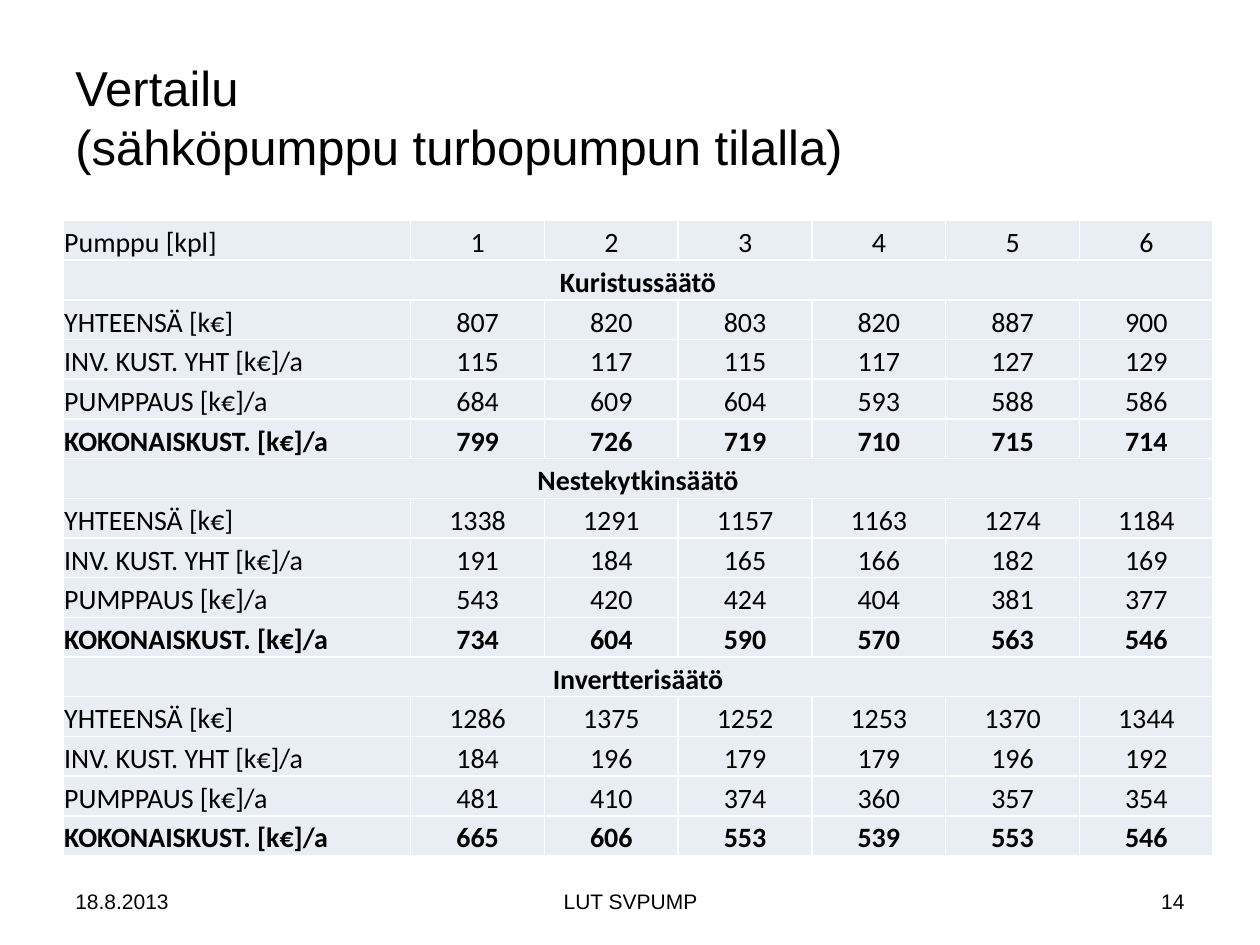
"""Build a slide that compares pump control costs in one table."""
from lxml import etree
from pptx import Presentation
from pptx.dml.color import RGBColor
from pptx.enum.text import MSO_ANCHOR, PP_ALIGN
from pptx.oxml.ns import qn
from pptx.util import Inches, Pt

LEFT, CENTER, RIGHT = PP_ALIGN.LEFT, PP_ALIGN.CENTER, PP_ALIGN.RIGHT
MIDDLE, BOTTOM = MSO_ANCHOR.MIDDLE, MSO_ANCHOR.BOTTOM
COLORS = {"text": "000000", "cell": "E9EDF4", "border": "FFFFFF"}
GRID_COLUMNS, GRID_ROWS = 100, 75

MEASURES = ["YHTEENSÄ [k€]", "INV. KUST. YHT [k€]/a", "PUMPPAUS [k€]/a", "KOKONAISKUST. [k€]/a"]
CONTROLS = {
    "Kuristussäätö": [
        [807, 820, 803, 820, 887, 900],
        [115, 117, 115, 117, 127, 129],
        [684, 609, 604, 593, 588, 586],
        [799, 726, 719, 710, 715, 714],
    ],
    "Nestekytkinsäätö": [
        [1338, 1291, 1157, 1163, 1274, 1184],
        [191, 184, 165, 166, 182, 169],
        [543, 420, 424, 404, 381, 377],
        [734, 604, 590, 570, 563, 546],
    ],
    "Invertterisäätö": [
        [1286, 1375, 1252, 1253, 1370, 1344],
        [184, 196, 179, 179, 196, 192],
        [481, 410, 374, 360, 357, 354],
        [665, 606, 553, 539, 553, 546],
    ],
}


class SlideBuilder:
    def __init__(self, deck):
        self.page = deck.slides.add_slide(deck.slide_layouts[6])
        self.column = deck.slide_width / GRID_COLUMNS
        self.row = deck.slide_height / GRID_ROWS

    def place(self, left, top, width, height):
        return (round(left * self.column), round(top * self.row),
                round(width * self.column), round(height * self.row))

    def fill_frame(self, frame, text, align, **font):
        frame.text = text
        para = frame.paragraphs[0]
        para.alignment = align
        for span in para.runs:
            span.font.color.rgb = RGBColor.from_string(COLORS["text"])
            for name, value in font.items():
                setattr(span.font, name, value)

    def text(self, area, text, size, align=LEFT):
        frame = self.page.shapes.add_textbox(*self.place(*area)).text_frame
        frame.word_wrap = True
        frame.vertical_anchor = MIDDLE
        self.fill_frame(frame, text, align, name="Arial", size=Pt(size))

    def cell(self, cell, text, align, bold):
        layout = {"margin_left": Inches(0.01), "margin_right": Inches(0.01),
                  "margin_top": Inches(0.01), "margin_bottom": 0, "vertical_anchor": BOTTOM}
        for name, value in layout.items():
            setattr(cell, name, value)
        properties = cell._tc.get_or_add_tcPr()
        for side in ("a:lnL", "a:lnR", "a:lnT", "a:lnB"):
            line = etree.SubElement(properties, qn(side), w=str(Pt(1)))
            fill = etree.SubElement(line, qn("a:solidFill"))
            etree.SubElement(fill, qn("a:srgbClr"), val=COLORS["border"])
        cell.fill.solid()
        cell.fill.fore_color.rgb = RGBColor.from_string(COLORS["cell"])
        self.fill_frame(cell.text_frame, text, align, name="Calibri", size=Pt(16), bold=bold)

    def table(self, area, label_width, rows):
        count = max(len(values) for values, _ in rows)
        left, top, width, height = self.place(*area)
        table = self.page.shapes.add_table(len(rows), count, left, top, width, height).table
        table.first_row = table.horz_banding = False
        label = round(label_width * self.column)
        for index, column in enumerate(table.columns):
            column.width = (width - label) // (count - 1) if index else label
        for index, (values, bold) in enumerate(rows):
            table.rows[index].height = height // len(rows)
            heading = len(values) == 1
            if heading:
                table.cell(index, 0).merge(table.cell(index, count - 1))
            for position in range(count):
                text = str(values[position]) if position < len(values) else ""
                align = CENTER if heading or position else LEFT
                self.cell(table.cell(index, position), text, align, bold)


def comparison_rows():
    rows = [(["Pumppu [kpl]", *range(1, 7)], False)]
    for control, figures in CONTROLS.items():
        rows.append(([control], True))
        for measure, values in zip(MEASURES, figures):
            rows.append(([measure, *values], measure == MEASURES[-1]))
    return rows


def main():
    deck = Presentation()
    deck.slide_width, deck.slide_height = Inches(10), Inches(7.5)
    slide = SlideBuilder(deck)
    slide.text((5, 3, 90, 12.5), "Vertailu \v(sähköpumppu turbopumpun tilalla)", 28)
    slide.text((5, 69.5, 23.3, 4), "18.8.2013", 12)
    slide.text((34.2, 69.5, 31.7, 4), "LUT SVPUMP", 12, CENTER)
    slide.text((71.7, 69.5, 23.3, 4), "14", 12, RIGHT)
    slide.table((5, 17.5, 91.3, 50.4), 27.6, comparison_rows())
    deck.save("out.pptx")


if __name__ == "__main__":
    main()
